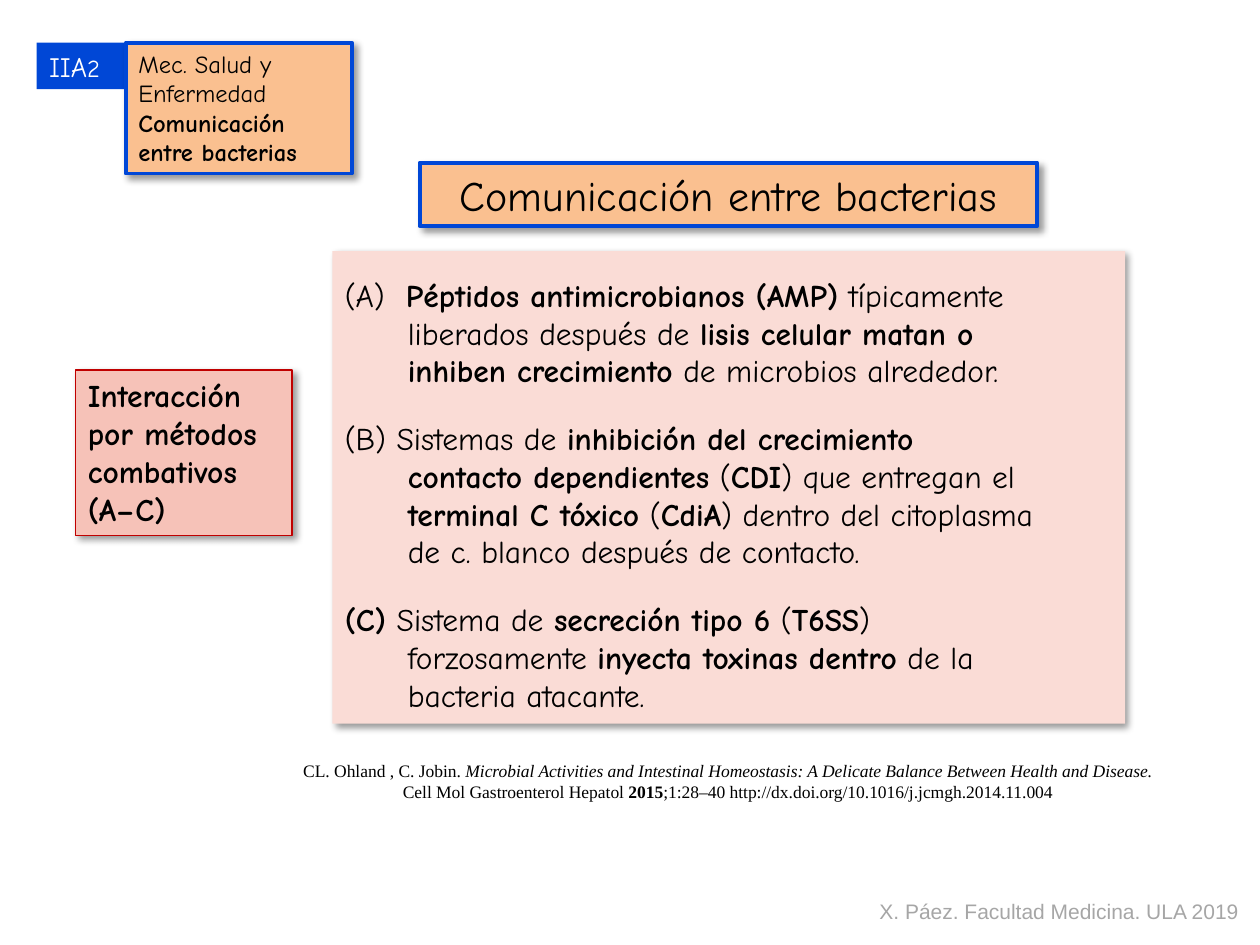
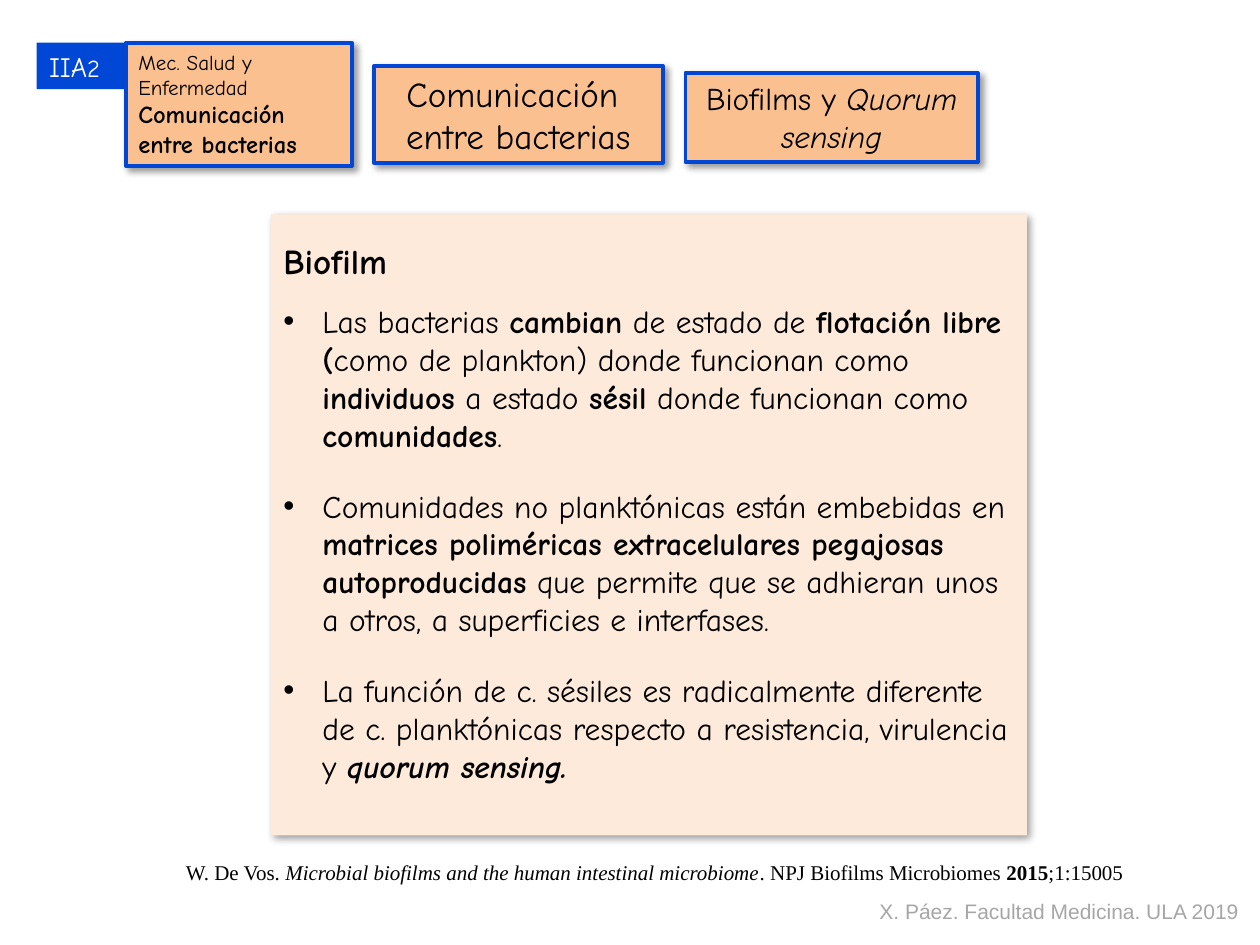
from copy import deepcopy
from dataclasses import dataclass

from lxml import etree
from pptx import Presentation
from pptx import util as u
from pptx.dml.color import RGBColor
from pptx.enum import shapes, text
from pptx.oxml.ns import qn


@dataclass(frozen=True)
class Theme:
    """Colours, fonts and type sizes of the deck."""
    blue: str = "0047D6"
    peach: str = "FAC090"
    rose: str = "F6C2B8"
    blush: str = "FADCD6"
    cream: str = "FDEADA"
    red: str = "C00000"
    grey: str = "A6A6A6"
    black: str = "000000"
    white: str = "FFFFFF"
    hand: str = "Comic Neue"
    serif: str = "Times New Roman"
    sans: str = "Arial"
    head: int = 24
    sub: int = 20
    main: int = 18
    chip: int = 16
    crumb: int = 14
    small: int = 12
    cite: int = 10


T = Theme()
MID = text.PP_ALIGN.CENTER


def place(shape, box):
    """Move a shape to a box of left, top, width and height in cm."""
    shape.left, shape.top, shape.width, shape.height = map(u.Cm, box)


def shade(shape):
    """Give a shape the soft shadow of the deck."""
    shape.shadow.inherit = False
    fx = shape._element.spPr.find(qn("a:effectLst"))
    out = etree.SubElement(fx, qn("a:outerShdw"), blurRad=str(u.Pt(4)),
                           dist=str(u.Pt(3)), dir="2700000", algn="tl", rotWithShape="0")
    tint = etree.SubElement(out, qn("a:srgbClr"), val=T.black)
    etree.SubElement(tint, qn("a:alpha"), val="40000")


def paint(shape, fill, line=None, width=2.25, deep=True):
    """Fill and outline a shape, with or without shadow."""
    shape.fill.solid()
    shape.fill.fore_color.rgb = RGBColor.from_string(fill)
    if line:
        shape.line.color.rgb = RGBColor.from_string(line)
        shape.line.width = u.Pt(width)
    else:
        shape.line.fill.background()
    if deep:
        shade(shape)
    else:
        shape.shadow.inherit = False


def style(run, size, font=T.hand, color=T.black):
    """Set size, font and colour of a run."""
    run.font.size = u.Pt(size)
    run.font.name = font
    run.font.color.rgb = RGBColor.from_string(color)


def mark(para, words, size, font=T.hand, color=T.black):
    """Write words, where *stars* mean bold, _bars_ italic and newline a break."""
    for i, bold in enumerate(words.split("*")):
        for j, part in enumerate(bold.split("_")):
            for k, line in enumerate(part.split("\n")):
                if k:
                    para.add_line_break()
                if line:
                    run = para.add_run()
                    run.text = line
                    style(run, size, font, color)
                    run.font.bold = i % 2 == 1
                    run.font.italic = j % 2 == 1
    for br in para._p.findall(qn("a:br")):
        br.append(deepcopy(para.runs[0]._r.rPr))


def frame(shape, wrap=True, top=0.13):
    """Set margins, wrapping and anchor, and return the text frame."""
    tf = shape.text_frame
    tf.auto_size = text.MSO_AUTO_SIZE.NONE
    tf.word_wrap = wrap
    tf.vertical_anchor = text.MSO_ANCHOR.TOP
    tf.margin_left = tf.margin_right = u.Cm(0.25)
    tf.margin_top, tf.margin_bottom = u.Cm(top), u.Cm(0.13)
    return tf


def write(tf, lines, align=text.PP_ALIGN.LEFT, **look):
    """Write one paragraph for each pair of words and size."""
    for i, (words, size) in enumerate(lines):
        para = tf.add_paragraph() if i else tf.paragraphs[0]
        para.alignment = align
        mark(para, words, size, **look)


def card(slide, box, lines, fill, line=None, width=2.25, align=text.PP_ALIGN.LEFT):
    """Draw a shaded rectangle with text."""
    shape = slide.shapes.add_shape(shapes.MSO_SHAPE.RECTANGLE, *map(u.Cm, box))
    paint(shape, fill, line, width)
    write(frame(shape), lines, align)


def note(slide, box, words, size, font, color=T.black, wrap=False, align=text.PP_ALIGN.LEFT):
    """Add a plain text box."""
    shape = slide.shapes.add_textbox(*map(u.Cm, box))
    write(frame(shape, wrap), [(words, size)], align, font=font, color=color)


def header(slide, box, size):
    """Draw the unit chip and the topic card in the upper left corner."""
    x, y, w, h = box
    chip = slide.shapes.add_shape(shapes.MSO_SHAPE.RECTANGLE, *map(u.Cm, (x, y, 1.9, 0.94)))
    paint(chip, T.blue, deep=False)
    tf = frame(chip, wrap=False)
    write(tf, [("IIA", T.chip)], color=T.white)
    mark(tf.paragraphs[0], "2", T.crumb, color=T.white)
    lines = [("Mec. Salud y", size), ("Enfermedad", size),
             ("*Comunicación entre bacterias*", T.crumb)]
    card(slide, (x + 1.8, y, w - 1.8, h), lines, T.peach, T.blue)


def title(slide, box, words, size):
    """Turn the title placeholder into the framed heading."""
    shape = slide.shapes.title
    place(shape, box)
    paint(shape, T.peach, T.blue)
    write(frame(shape), [(words, size)], MID)


def panel(slide, box, fill, items, hang, gaps, sign=None, lead=None):
    """Turn the body placeholder into a shaded list with an optional lead line."""
    shape = slide.placeholders[1]
    place(shape, box)
    paint(shape, fill)
    tf = frame(shape, top=0.5)
    rows = ([(lead, T.sub, 0, None)] if lead else []) + [(i, T.main, hang, sign) for i in items]
    for n, (words, size, dent, dot) in enumerate(rows):
        para = tf.add_paragraph() if n else tf.paragraphs[0]
        ppr = para._p.get_or_add_pPr()
        ppr.set("marL", str(u.Cm(dent)))
        ppr.set("indent", str(-u.Cm(dent)))
        if dot:
            etree.SubElement(ppr, qn("a:buFont"), typeface=T.sans)
            etree.SubElement(ppr, qn("a:buChar"), char=dot)
        else:
            etree.SubElement(ppr, qn("a:buNone"))
        para.space_before = u.Pt(gaps[n])
        mark(para, words, size)


def footer(slide):
    """Add the author line."""
    note(slide, (17.48, 17.98, 7.82, 0.77), "X. Páez. Facultad Medicina. ULA 2019",
         T.small, T.sans, T.grey)


def combat(slide):
    """Build the slide on combative interaction."""
    title(slide, (8.46, 3.28, 12.45, 1.28), "Comunicación entre bacterias", T.head)
    items = [
        "(A)  *Péptidos antimicrobianos (AMP)* típicamente\n"
        "liberados después de *lisis celular matan o\n"
        "inhiben crecimiento* de microbios alrededor.",
        "(B) Sistemas de *inhibición del crecimiento\n"
        "contacto dependientes* (*CDI*) que entregan el\n"
        "*terminal C tóxico* (*CdiA*) dentro del citoplasma\n"
        "de c. blanco después de contacto.",
        "*(C)* Sistema de *secreción tipo 6* (*T6SS*)\n"
        "forzosamente *inyecta toxinas dentro* de la\n"
        "bacteria atacante.",
    ]
    panel(slide, (6.7, 5.06, 15.98, 9.53), T.blush, items, 1.27, (0, 17, 17))
    header(slide, (0.74, 0.86, 6.35, 2.64), T.crumb)
    card(slide, (1.52, 7.46, 4.37, 3.34),
         [("*Interacción por métodos combativos (A–C)*", T.main)], T.rose, T.red, 0.75)
    note(slide, (5.84, 15.19, 17.66, 1.12),
         "CL. Ohland , C. Jobin. _Microbial Activities and Intestinal Homeostasis: "
         "A Delicate Balance Between Health and Disease._\n"
         "Cell Mol Gastroenterol Hepatol *2015*;1:28–40 "
         "http://dx.doi.org/10.1016/j.jcmgh.2014.11.004",
         T.cite, T.serif, wrap=True, align=MID)
    footer(slide)


def biofilm(slide):
    """Build the slide on biofilms."""
    title(slide, (7.54, 1.33, 5.82, 1.95), "Comunicación \nentre bacterias", T.sub)
    items = [
        "Las bacterias *cambian* de estado de *flotación libre (*como de plankton) "
        "donde funcionan como *individuos* a estado *sésil* donde funcionan como "
        "*comunidades*.",
        "Comunidades no planktónicas están embebidas en *matrices poliméricas "
        "extracelulares pegajosas autoproducidas* que permite que se adhieran "
        "unos a otros, a superficies e interfases.",
        "La función de c. sésiles es radicalmente diferente de c. planktónicas "
        "respecto a resistencia, virulencia y *_quorum sensing._*",
    ]
    panel(slide, (5.46, 4.32, 15.24, 12.52), T.cream, items, 0.79, (0, 12, 19, 19),
          "•", "*Biofilm*")
    header(slide, (0.74, 0.86, 6.35, 2.49), T.small)
    card(slide, (13.82, 1.47, 5.89, 1.8), [("Biofilms y _Quorum sensing_", T.main)],
         T.peach, T.blue, align=MID)
    note(slide, (3.5, 17.2, 19.71, 0.77),
         "W. De Vos. _Microbial biofilms and the human intestinal microbiome_. "
         "NPJ Biofilms Microbiomes *2015*;1:15005", T.small, T.serif)
    footer(slide)


def main():
    """Build and save the deck."""
    deck = Presentation()
    deck.slide_width, deck.slide_height = u.Cm(25.4), u.Cm(19.05)
    for build in (combat, biofilm):
        build(deck.slides.add_slide(deck.slide_layouts[1]))
    deck.save("out.pptx")


if __name__ == "__main__":
    main()
